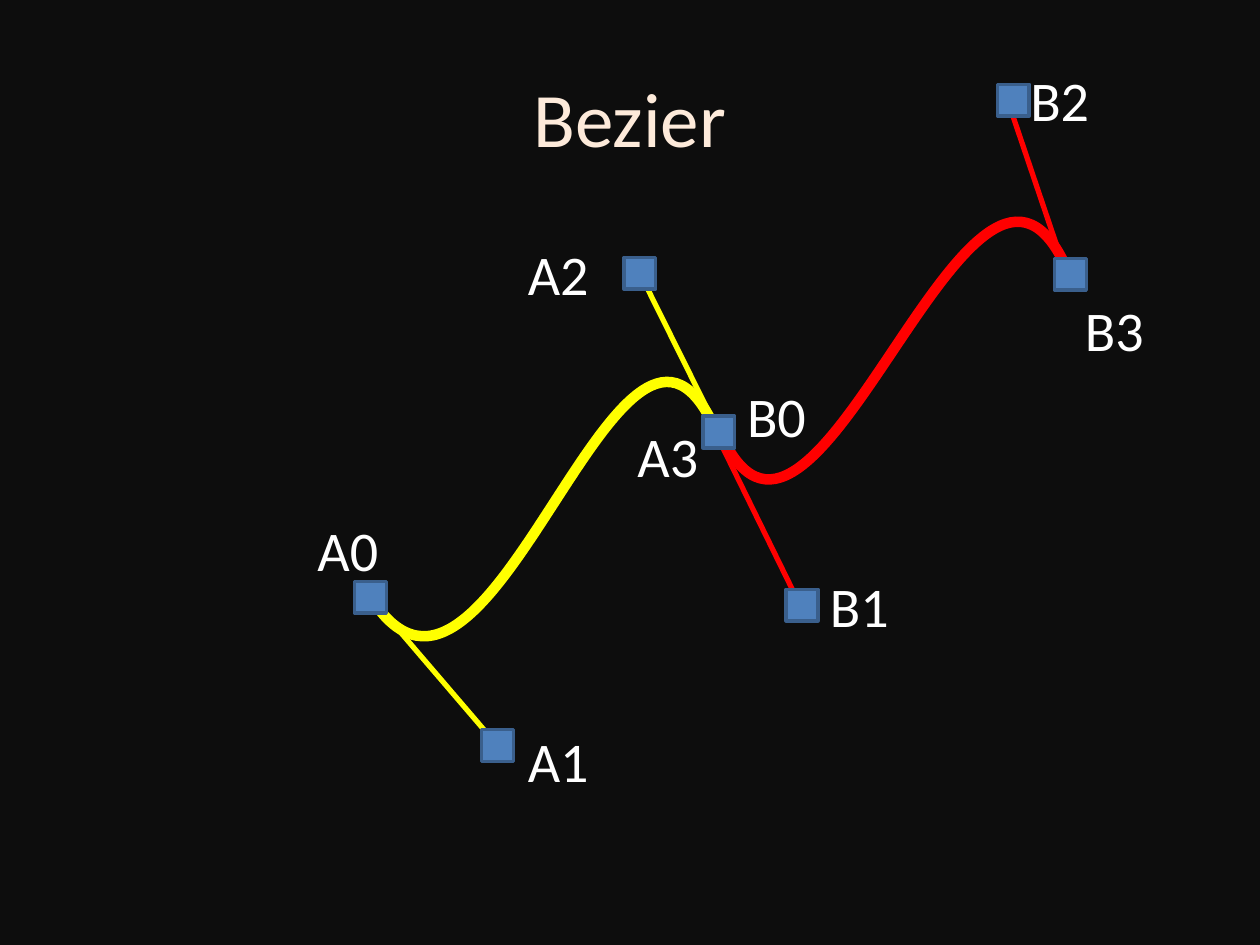
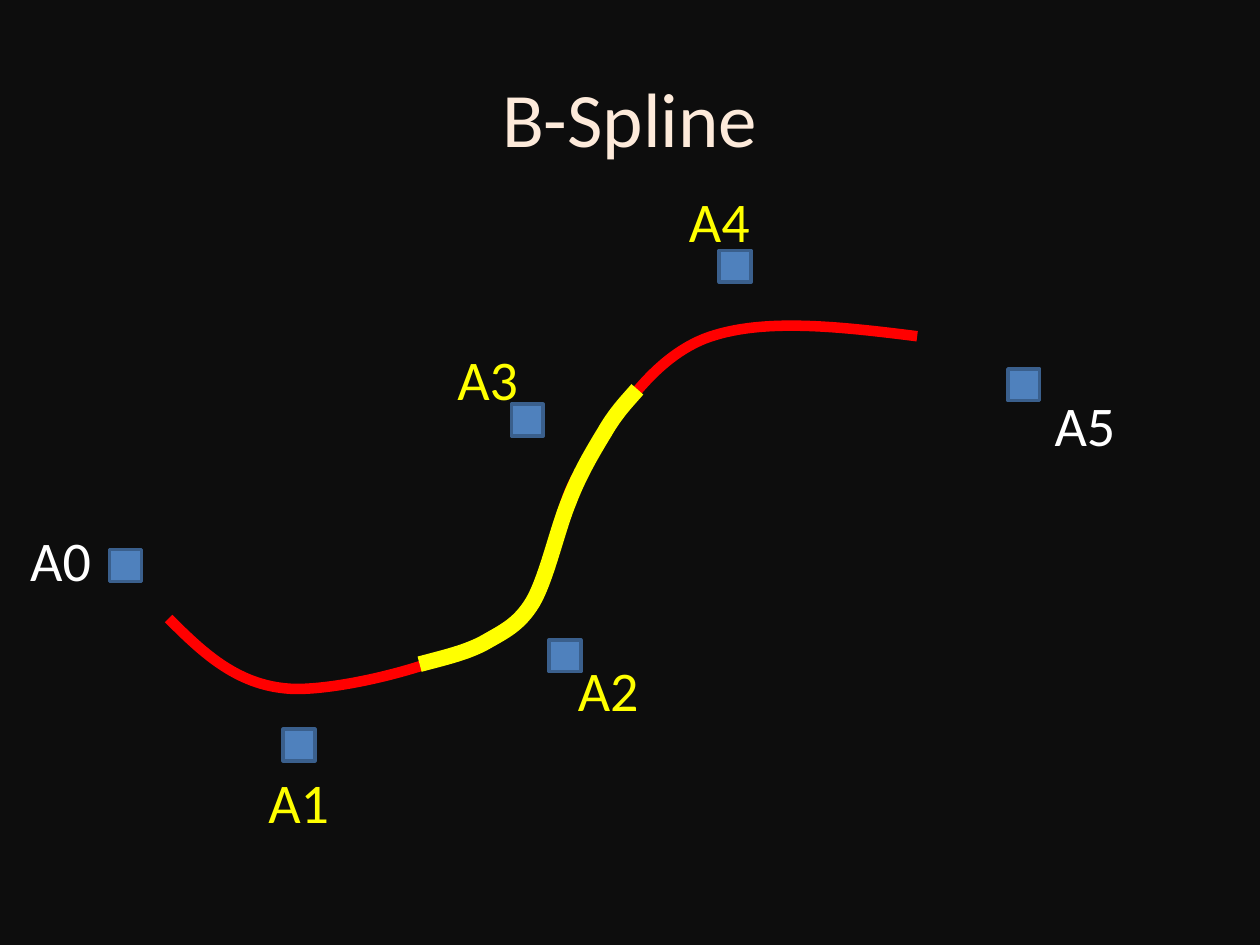
import dataclasses
import itertools
import typing

import lxml.etree
import pptx
import pptx.dml.color
import pptx.enum.shapes
import pptx.enum.text
import pptx.oxml.ns
import pptx.util

Point = tuple[float, float]


@dataclasses.dataclass(frozen=True)
class Theme:
    font: str = "Calibri"
    background: str = "0D0D0D"
    title: str = "FDEADA"
    label: str = "FFFFFF"
    knot_fill: str = "4F81BD"
    knot_edge: str = "3A5F8C"
    yellow: str = "FFFF00"
    red: str = "FF0000"
    title_size: int = 44
    label_size: int = 32
    knot_edge_width: int = 2
    handle_width: int = 3
    curve_width: int = 6
    highlight_width: int = 9


THEME = Theme()
KNOT_SIDE = 0.64
LABEL_SIZE = (1.75, 1.63)
SAMPLES_PER_SEGMENT = 40


class Handle(typing.NamedTuple):
    start: Point
    end: Point
    color: str


class Curve(typing.NamedTuple):
    points: list[Point]
    color: str
    width: int = THEME.curve_width


class Label(typing.NamedTuple):
    text: str
    corner: Point
    color: str = THEME.label


@dataclasses.dataclass(frozen=True)
class Diagram:
    title: str
    curves: list[Curve]
    knots: list[Point]
    labels: list[Label]
    handles: list[Handle] = dataclasses.field(default_factory=list)


BEZIER = Diagram(
    title="Bezier",
    handles=[
        Handle((7.47, 12.04), (10.03, 15.03), THEME.yellow),
        Handle((12.9, 5.51), (14.49, 8.71), THEME.yellow),
        Handle((14.48, 8.84), (16.05, 12.04), THEME.red),
        Handle((20.42, 2.34), (21.39, 5.21), THEME.red),
    ],
    curves=[
        Curve([(7.47, 12.04), (9.91, 15.88), (12.57, 4.19), (14.48, 8.79)], THEME.yellow),
        Curve([(14.55, 8.79), (16.46, 12.9), (19.66, 0.94), (21.56, 5.54)], THEME.red),
    ],
    knots=[
        (7.47, 12.04), (10.03, 15.03), (12.9, 5.51), (14.49, 8.71),
        (16.17, 12.2), (20.43, 2.02), (21.58, 5.53),
    ],
    labels=[
        Label("A0", (6.15, 10.26)),
        Label("A1", (10.39, 14.53)),
        Label("A2", (10.39, 4.7)),
        Label("A3", (12.6, 8.38)),
        Label("B0", (14.81, 7.57)),
        Label("B1", (16.48, 11.4)),
        Label("B2", (20.52, 1.19)),
        Label("B3", (21.62, 5.84)),
    ],
)

B_SPLINE = Diagram(
    title="B-Spline",
    curves=[
        Curve([
            (3.4, 12.47), (4.11, 13.18), (4.83, 13.87), (5.97, 13.89),
            (7.11, 13.89), (9.37, 13.31), (10.31, 12.57),
            (11.28, 11.84), (11.07, 10.41), (11.73, 9.45),
            (12.37, 8.51), (13.06, 7.29), (14.2, 6.83),
            (15.32, 6.4), (16.89, 6.58), (18.49, 6.78),
        ], THEME.red),
        Curve([
            (8.46, 13.39), (8.94, 13.26), (9.4, 13.16), (9.78, 12.95),
            (10.16, 12.73), (10.46, 12.6), (10.74, 12.14),
            (11.02, 11.66), (11.23, 10.69), (11.46, 10.13),
            (11.68, 9.55), (11.96, 9.09), (12.19, 8.71),
            (12.42, 8.31), (12.65, 8.08), (12.85, 7.85),
        ], THEME.yellow, THEME.highlight_width),
    ],
    knots=[
        (2.53, 11.4), (6.03, 15.02), (11.39, 13.22),
        (10.63, 8.47), (14.82, 5.37), (20.64, 7.76),
    ],
    labels=[
        Label("A0", (0.36, 10.46)),
        Label("A1", (5.16, 15.34), THEME.yellow),
        Label("A2", (11.4, 13.08), THEME.yellow),
        Label("A3", (8.97, 6.83), THEME.yellow),
        Label("A4", (13.64, 3.63), THEME.yellow),
        Label("A5", (21.01, 7.75)),
    ],
)


def rgb(value: str) -> pptx.dml.color.RGBColor:
    return pptx.dml.color.RGBColor.from_string(value)


def lengths(values: typing.Iterable[float]) -> list[pptx.util.Cm]:
    return [pptx.util.Cm(value) for value in values]


def style_line(line, color: str, width: float) -> None:
    line.color.rgb = rgb(color)
    line.width = pptx.util.Pt(width)


def add_run(paragraph, text: str, size: int, color: str) -> None:
    run = paragraph.add_run()
    run.text = text
    run.font.name = THEME.font
    run.font.size = pptx.util.Pt(size)
    run.font.color.rgb = rgb(color)


def set_title(slide, text: str) -> None:
    title = slide.shapes.title
    title.left, title.top, title.width, title.height = lengths((1.27, 0.76, 22.86, 3.18))
    title.text_frame.vertical_anchor = pptx.enum.text.MSO_ANCHOR.MIDDLE
    paragraph = title.text_frame.paragraphs[0]
    paragraph.alignment = pptx.enum.text.PP_ALIGN.CENTER
    add_run(paragraph, text, THEME.title_size, THEME.title)


def draw_handle(slide, handle: Handle) -> None:
    connector = slide.shapes.add_connector(
        pptx.enum.shapes.MSO_CONNECTOR.STRAIGHT, *lengths(handle.start + handle.end))
    style_line(connector.line, handle.color, THEME.handle_width)
    properties = connector.element.find(pptx.oxml.ns.qn("p:spPr"))
    lxml.etree.SubElement(properties, pptx.oxml.ns.qn("a:effectLst"))


def bezier_point(controls: typing.Sequence[Point], t: float) -> Point:
    weights = ((1 - t) ** 3, 3 * t * (1 - t) ** 2, 3 * t ** 2 * (1 - t), t ** 3)
    x, y = (sum(w * value for w, value in zip(weights, axis)) for axis in zip(*controls))
    return x, y


def draw_curve(slide, curve: Curve) -> None:
    starts = range(0, len(curve.points) - 1, 3)
    samples = [
        lengths(bezier_point(curve.points[start:start + 4], step / SAMPLES_PER_SEGMENT))
        for start, step in itertools.product(starts, range(1, SAMPLES_PER_SEGMENT + 1))
    ]
    builder = slide.shapes.build_freeform(*lengths(curve.points[0]))
    builder.add_line_segments(samples, close=False)
    outline = builder.convert_to_shape()
    outline.shadow.inherit = False
    outline.fill.background()
    style_line(outline.line, curve.color, curve.width)

    qn = pptx.oxml.ns.qn
    track = next(outline.element.iter(qn("a:path")))
    for segment in track.findall(qn("a:lnTo")):
        track.remove(segment)
    for start in starts:
        segment = lxml.etree.SubElement(track, qn("a:cubicBezTo"))
        for point in curve.points[start + 1:start + 4]:
            x, y = lengths(point)
            lxml.etree.SubElement(
                segment, qn("a:pt"), x=str(x - outline.left), y=str(y - outline.top))


def draw_knot(slide, center: Point) -> None:
    x, y = center
    knot = slide.shapes.add_shape(
        pptx.enum.shapes.MSO_SHAPE.RECTANGLE,
        *lengths((x - KNOT_SIDE / 2, y - KNOT_SIDE / 2, KNOT_SIDE, KNOT_SIDE)))
    knot.shadow.inherit = False
    knot.fill.solid()
    knot.fill.fore_color.rgb = rgb(THEME.knot_fill)
    style_line(knot.line, THEME.knot_edge, THEME.knot_edge_width)


def draw_label(slide, label: Label) -> None:
    frame = slide.shapes.add_textbox(*lengths(label.corner + LABEL_SIZE)).text_frame
    frame.word_wrap = False
    frame.auto_size = pptx.enum.text.MSO_AUTO_SIZE.SHAPE_TO_FIT_TEXT
    add_run(frame.paragraphs[0], label.text, THEME.label_size, label.color)


def draw_diagram(presentation, diagram: Diagram) -> None:
    slide = presentation.slides.add_slide(
        presentation.slide_layouts.get_by_name("Title Only"))
    set_title(slide, diagram.title)
    for handle in diagram.handles:
        draw_handle(slide, handle)
    for curve in diagram.curves:
        draw_curve(slide, curve)
    for knot in diagram.knots:
        draw_knot(slide, knot)
    for label in diagram.labels:
        draw_label(slide, label)


def main() -> None:
    presentation = pptx.Presentation()
    presentation.slide_width, presentation.slide_height = lengths((25.4, 19.05))
    backdrop = presentation.slide_master.background.fill
    backdrop.solid()
    backdrop.fore_color.rgb = rgb(THEME.background)
    for diagram in (BEZIER, B_SPLINE):
        draw_diagram(presentation, diagram)
    presentation.save("out.pptx")


if __name__ == "__main__":
    main()
